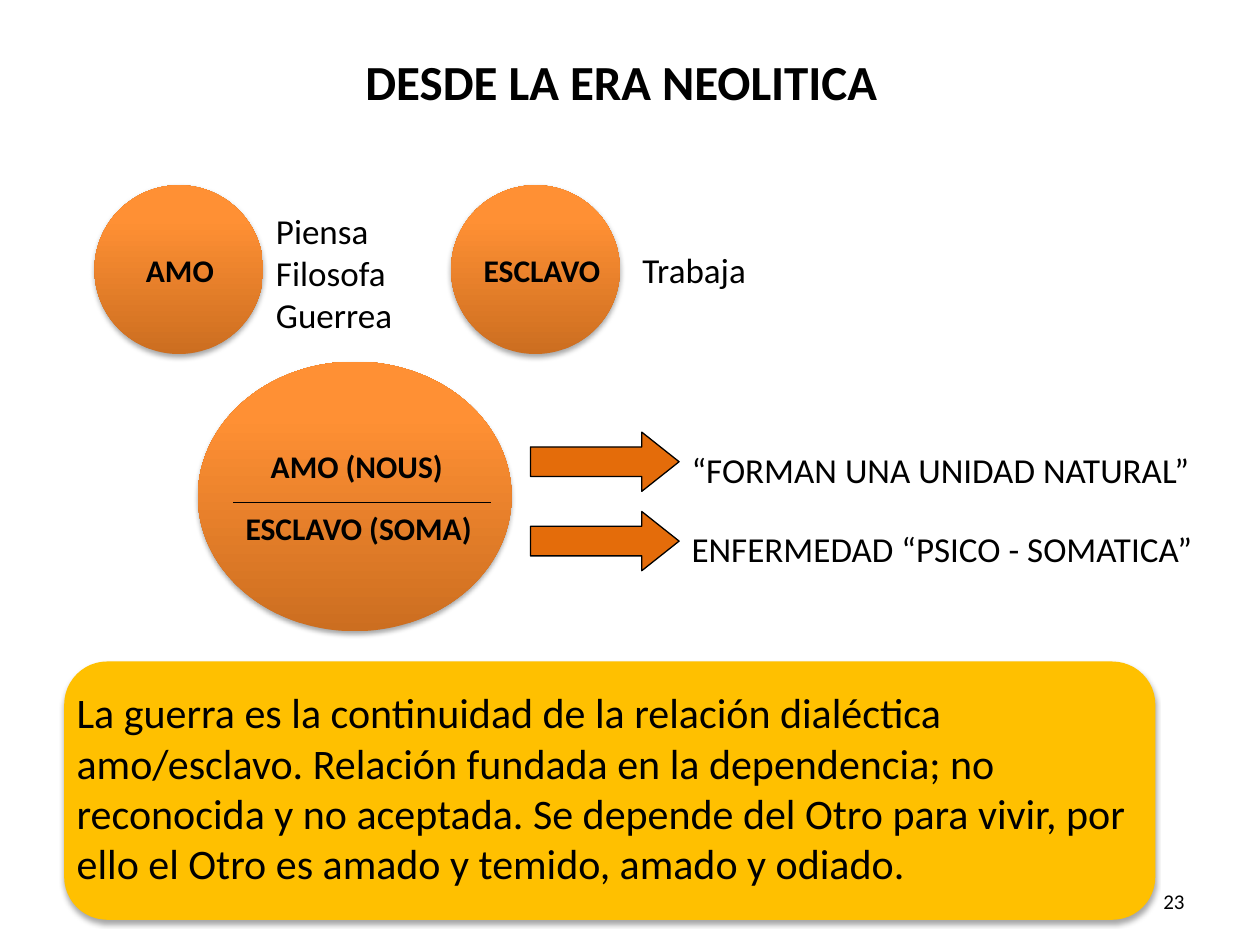
import copy
from collections import namedtuple
from dataclasses import dataclass

import pptx
import pptx.dml.color
import pptx.enum.shapes
import pptx.enum.text
import pptx.oxml
import pptx.oxml.ns
import pptx.util

SHAPES = pptx.enum.shapes.MSO_SHAPE
ALIGN = pptx.enum.text.PP_ALIGN
ANCHOR = pptx.enum.text.MSO_ANCHOR
CELL = pptx.util.Inches(10) // 100  # the slide is a grid of 100 columns and 75 rows


@dataclass(frozen=True)
class Theme:
    font: str = "Calibri"
    ink: str = "000000"
    arrow: str = "E46C0A"
    panel: str = "FFC000"
    circle: tuple = ((0, "CC6E20"), (0.8, "FF9034"), (1, "FF9136"))
    title: int = 28
    body: int = 24
    note: int = 20
    label: int = 18
    number: int = 12
    line: float = 0.75


THEME = Theme()


class Box(namedtuple("Box", "left top width height")):
    """An area in grid cells."""

    def inner(self, left, top, width, height):
        return Box(self.left + left, self.top + top, width, height)

    def lengths(self):
        return [round(value * CELL) for value in self]


def color(value):
    return pptx.dml.color.RGBColor.from_string(value)


def write(shape, text, size=THEME.note, bold=False, align=ALIGN.LEFT,
          anchor=ANCHOR.TOP, wrap=True):
    frame = shape.text_frame
    frame.text = text
    frame.word_wrap = wrap
    frame.auto_size = pptx.enum.text.MSO_AUTO_SIZE.NONE
    frame.vertical_anchor = anchor
    for paragraph in frame.paragraphs:
        paragraph.alignment = align
        paragraph.space_before = pptx.util.Pt(0)
        for run in paragraph.runs:
            font = run.font
            font.name, font.size, font.bold = THEME.font, pptx.util.Pt(size), bold
            font.color.rgb = color(THEME.ink)
    return shape


def add_text(slide, box, text, **style):
    return write(slide.shapes.add_textbox(*box.lengths()), text, **style)


def place(shape, box):
    shape.left, shape.top, shape.width, shape.height = box.lengths()
    return shape


def add_shape(slide, kind, box, fill=None):
    shape = slide.shapes.add_shape(kind, *box.lengths())
    shape.shadow.inherit = False
    shape.line.fill.background()
    if fill:
        shape.fill.solid()
        shape.fill.fore_color.rgb = color(fill)
    return shape


def add_shadow(shape):
    effects = shape.element.spPr.find(pptx.oxml.ns.qn("a:effectLst"))
    effects.append(pptx.oxml.parse_xml(
        f'<a:outerShdw {pptx.oxml.ns.nsdecls("a")} blurRad="39370" dist="22860" '
        'dir="5400000" rotWithShape="0"><a:srgbClr val="000000">'
        '<a:alpha val="35000"/></a:srgbClr></a:outerShdw>'))


def add_circle(slide, box):
    circle = add_shape(slide, SHAPES.OVAL, box)
    circle.fill.gradient()
    circle.fill.gradient_angle = 90
    # The default gradient has two stops; a third is needed
    stops = circle.element.spPr.find(".//" + pptx.oxml.ns.qn("a:gsLst"))
    stops.append(copy.deepcopy(stops[-1]))
    for stop, (position, value) in zip(circle.fill.gradient_stops, THEME.circle):
        stop.position = position
        stop.color.rgb = color(value)
    add_shadow(circle)


def add_title(slide, box):
    write(place(slide.shapes.title, box), "DESDE LA ERA NEOLITICA",
          size=THEME.title, bold=True)


def add_role(slide, box, name, label_left, label_width):
    add_circle(slide, box)
    add_text(slide, box.inner(label_left, 4.7, label_width, 4), name,
             size=THEME.label, bold=True, wrap=False)


def add_master_actions(slide, box):
    actions = write(place(slide.placeholders[1], box),
                    "Piensa\nFilosofa\nGuerrea", wrap=False)
    for paragraph in actions.text_frame.paragraphs:
        properties = paragraph._p.get_or_add_pPr()
        properties.set("marL", "0")
        properties.set("indent", "0")
        properties.append(
            pptx.oxml.parse_xml(f'<a:buNone {pptx.oxml.ns.nsdecls("a")}/>'))


def add_union(slide, box):
    add_circle(slide, box)
    # Dividing line
    left, top, width, _ = box.inner(2.8, 11.2, 20.5, 0).lengths()
    divider = slide.shapes.add_connector(
        pptx.enum.shapes.MSO_CONNECTOR.STRAIGHT, left, top, left + width, top)
    divider.line.color.rgb = color(THEME.ink)
    divider.line.width = pptx.util.Pt(THEME.line)
    divider.element.spPr.append(
        pptx.oxml.parse_xml(f'<a:effectLst {pptx.oxml.ns.nsdecls("a")}/>'))
    # Terms above and below it
    for text, area in (("AMO (NOUS)", box.inner(4.8, 6.3, 15.8, 4)),
                       ("ESCLAVO (SOMA)", box.inner(2.8, 11.2, 20.1, 4))):
        add_text(slide, area, text, size=THEME.label, bold=True, wrap=False)


def add_outcomes(slide, box, outcomes):
    step = 6.3
    for row, (text, width) in enumerate(outcomes):
        arrow = add_shape(slide, SHAPES.RIGHT_ARROW,
                          box.inner(0, row * step, 11.8, 4.7), THEME.arrow)
        arrow.adjustments[1] = 0.63
        arrow.line.color.rgb = color(THEME.ink)
        arrow.line.width = pptx.util.Pt(THEME.line)
        add_text(slide, box.inner(11.8, row * step + 0.8, width, 4.4), text, wrap=False)


def add_conclusion(slide, box):
    add_shadow(add_shape(slide, SHAPES.ROUNDED_RECTANGLE, box, THEME.panel))
    add_text(slide, box.inner(0, 1.5, 85.8, 17.2),
             "La guerra es la continuidad de la relación dialéctica amo/esclavo. "
             "Relación fundada en la dependencia; no reconocida y no aceptada. "
             "Se depende del Otro para vivir, por ello el Otro es amado y temido, "
             "amado y odiado.", size=THEME.body)


def add_number(slide, box):
    add_text(slide, box, "23", size=THEME.number, align=ALIGN.RIGHT,
             anchor=ANCHOR.MIDDLE)


def main():
    presentation = pptx.Presentation()
    presentation.slide_width = 100 * CELL
    presentation.slide_height = 75 * CELL
    slide = presentation.slides.add_slide(presentation.slide_layouts[1])

    add_title(slide, Box(28, 3.6, 48, 5.7))
    add_role(slide, Box(7.5, 14.7, 13.4, 13.4), "AMO", 3.1, 7.5)
    add_master_actions(slide, Box(20.9, 16.1, 11.3, 11.1))
    add_role(slide, Box(35.8, 14.7, 13.4, 13.4), "ESCLAVO", 1.6, 11.4)
    add_text(slide, Box(50, 19.2, 11, 6.7), "Trabaja")
    add_union(slide, Box(15.7, 28.7, 24.9, 21.4))
    add_outcomes(slide, Box(42.1, 34.3, 53.9, 11),
                 (("“FORMAN UNA UNIDAD NATURAL”", 41.5),
                  ("ENFERMEDAD “PSICO - SOMATICA”", 42.1)))
    add_conclusion(slide, Box(5.1, 52.5, 86.6, 20.5))
    add_number(slide, Box(71.7, 69.5, 23.3, 4))

    presentation.save("out.pptx")


if __name__ == "__main__":
    main()
